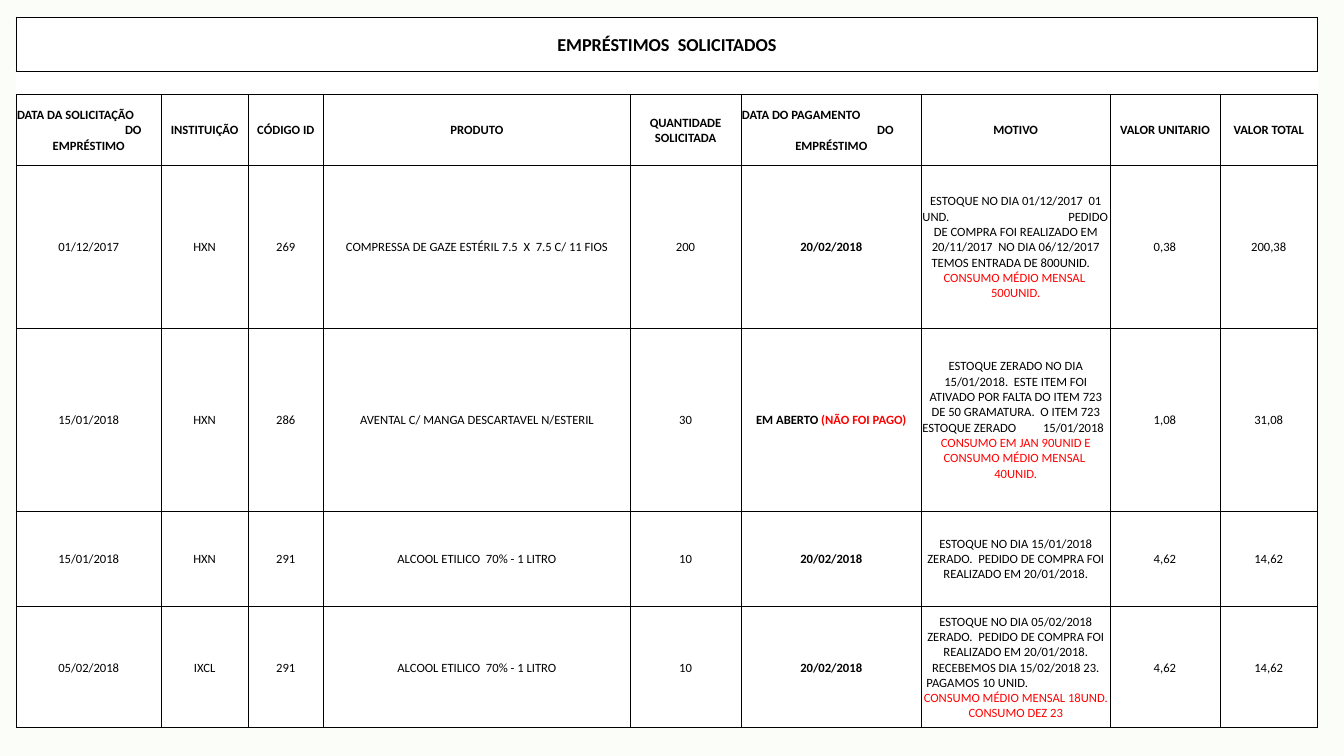
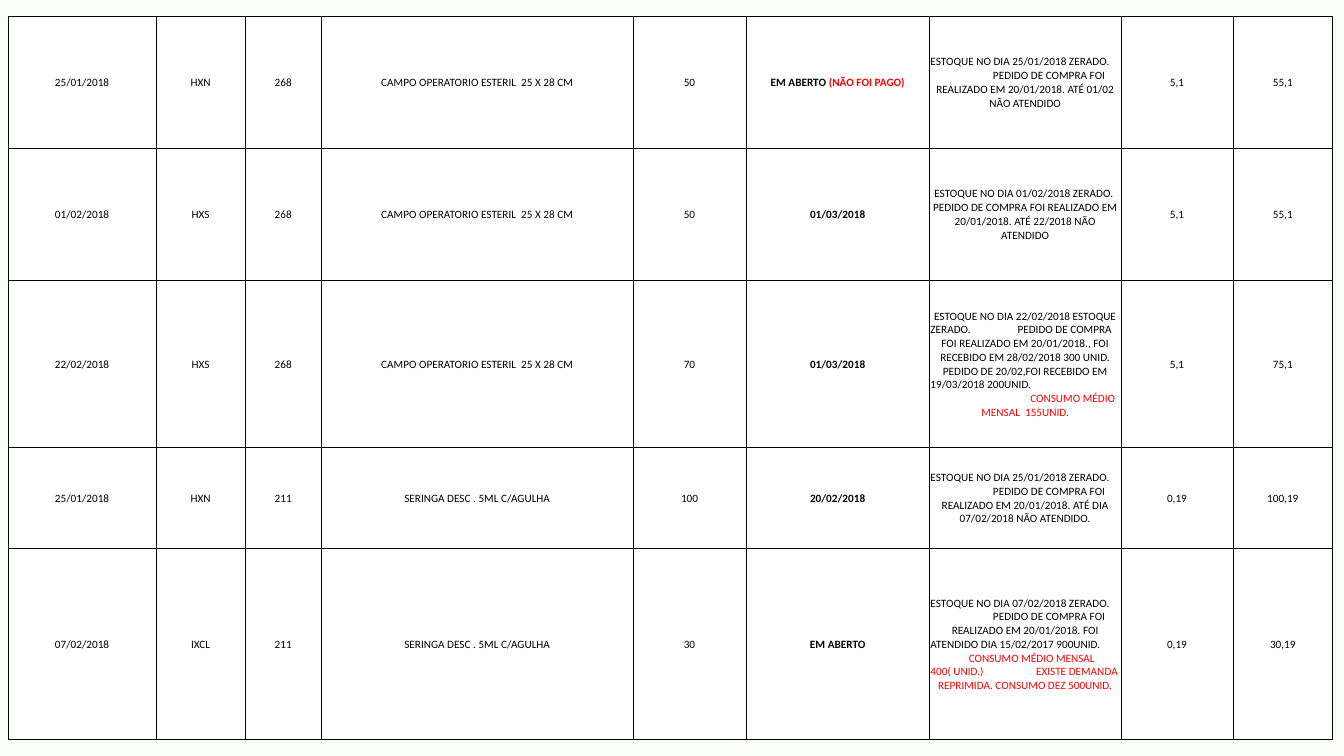
from dataclasses import dataclass
from typing import Optional

from lxml.etree import SubElement
from pptx import Presentation
from pptx.dml.color import RGBColor
from pptx.enum.shapes import MSO_SHAPE
from pptx.enum.text import MSO_ANCHOR, PP_ALIGN
from pptx.oxml.ns import qn
from pptx.util import Inches, Pt


# Shared look
@dataclass(frozen=True)
class Theme:
    font: str = "Calibri"
    ink: str = "000000"
    alert: str = "FF0000"
    paper: str = "FFFFFF"
    tint: str = "F7FCF2"
    tint_alpha: int = 44
    title_size: float = 13
    first_size: float = 9
    second_size: float = 8
    gap_size: float = 4
    rule: float = 0.5
    strong_rule: float = 1
    inset: float = 0.01


THEME = Theme()
WIDTH, HEIGHT = 13.33, 7.5
COLUMNS = (1.44, 0.86, 0.75, 3.04, 1.1, 1.79, 1.87, 1.09, 0.97)
SECOND_SCALE = 1.018


# Content model
@dataclass(frozen=True)
class Run:
    text: str
    color: str = THEME.ink
    bold: bool = False


@dataclass(frozen=True)
class Line:
    """Centred, unless it starts at a left indent; tab is a right stop."""
    runs: tuple[Run, ...]
    left: Optional[float] = None
    tab: Optional[float] = None


Content = tuple[Line, ...]


@dataclass(frozen=True)
class Loan:
    requested: str
    institution: str
    code: str
    product: str
    quantity: str
    payment: Content
    reason: Content
    unit_value: str
    total: str

    def cells(self) -> list[Content]:
        before = (self.requested, self.institution, self.code, self.product, self.quantity)
        return [*((plain(t),) for t in before), self.payment, self.reason,
                (plain(self.unit_value),), (plain(self.total),)]


def plain(text: str, left: Optional[float] = None, tab: Optional[float] = None) -> Line:
    return Line((Run(text),), left, tab)


def alert(text: str, left: Optional[float] = None, tab: Optional[float] = None) -> Line:
    return Line((Run(text, THEME.alert),), left, tab)


def bold(text: str, left: Optional[float] = None) -> Line:
    return Line((Run(text, bold=True),), left)


def out_of_stock(date: str) -> Content:
    return (plain(f"ESTOQUE NO DIA {date} ZERADO.", 0), plain("PEDIDO DE COMPRA FOI", 0.62))


UNPAID: Content = (Line((Run("EM ABERTO ", bold=True),
                         Run("(NÃO FOI PAGO)", THEME.alert, True))),)
PAID_FEB: Content = (bold("20/02/2018"),)
PAID_MAR: Content = (bold("01/03/2018"),)
NORTH, SOUTH, CLINIC = "HXN", "HXS", "IXCL"
ALCOHOL = "ALCOOL ETILICO  70% - 1 LITRO"
DRAPE = "CAMPO OPERATORIO ESTERIL  25 X 28 CM"
SYRINGE = "SERINGA DESC . 5ML C/AGULHA"

HEADINGS: list[Content] = [
    (bold("DATA DA SOLICITAÇÃO", 0), bold("DO", 1.07), bold("EMPRÉSTIMO")),
    (bold("INSTITUIÇÃO"),),
    (bold("CÓDIGO ID"),),
    (bold("PRODUTO"),),
    (bold("QUANTIDADE SOLICITADA"),),
    (bold("DATA DO PAGAMENTO", 0), bold("DO", 1.34), bold("EMPRÉSTIMO")),
    (bold("MOTIVO"),),
    (bold("VALOR UNITARIO"),),
    (bold("VALOR TOTAL"),),
]

FIRST_LOANS = [
    Loan("01/12/2017", NORTH, "269", "COMPRESSA DE GAZE ESTÉRIL 7.5  X  7.5 C/ 11 FIOS", "200",
         PAID_FEB,
         (plain("ESTOQUE NO DIA 01/12/2017  01"),
          plain("UND.\tPEDIDO", 0, 1.84),
          plain("DE COMPRA FOI REALIZADO EM 20/11/2017  NO DIA 06/12/2017"),
          plain("TEMOS ENTRADA DE 800UNID.", 0.09),
          alert("CONSUMO MÉDIO MENSAL  500UNID.")),
         "0,38", "200,38"),
    Loan("15/01/2018", NORTH, "286", "AVENTAL C/ MANGA DESCARTAVEL N/ESTERIL", "30",
         UNPAID,
         (plain("ESTOQUE ZERADO NO DIA 15/01/2018.  ESTE ITEM FOI ATIVADO POR FALTA "
                "DO ITEM 723 DE 50 GRAMATURA.  O ITEM 723"),
          plain("ESTOQUE ZERADO\t15/01/2018", 0, 1.8),
          alert("CONSUMO EM JAN 90UNID E CONSUMO MÉDIO MENSAL  40UNID.")),
         "1,08", "31,08"),
    Loan("15/01/2018", NORTH, "291", ALCOHOL, "10", PAID_FEB,
         (plain("ESTOQUE NO DIA 15/01/2018 ZERADO.  PEDIDO DE COMPRA FOI "
                "REALIZADO EM 20/01/2018."),),
         "4,62", "14,62"),
    Loan("05/02/2018", CLINIC, "291", ALCOHOL, "10", PAID_FEB,
         (plain("ESTOQUE NO DIA 05/02/2018 ZERADO.  PEDIDO DE COMPRA FOI "
                "REALIZADO EM 20/01/2018. RECEBEMOS DIA 15/02/2018 23."),
          plain("PAGAMOS 10 UNID.", 0.04),
          alert("CONSUMO MÉDIO MENSAL 18UND."),
          alert("CONSUMO DEZ 23")),
         "4,62", "14,62"),
]

SECOND_LOANS = [
    Loan("25/01/2018", NORTH, "268", DRAPE, "50", UNPAID,
         (*out_of_stock("25/01/2018"),
          plain("REALIZADO EM 20/01/2018. ATÉ 01/02 NÃO ATENDIDO")),
         "5,1", "55,1"),
    Loan("01/02/2018", SOUTH, "268", DRAPE, "50", PAID_MAR,
         (plain("ESTOQUE NO DIA 01/02/2018 ZERADO.  PEDIDO DE COMPRA FOI REALIZADO EM "
                "20/01/2018. ATÉ 22/2018 NÃO ATENDIDO"),),
         "5,1", "55,1"),
    Loan("22/02/2018", SOUTH, "268", DRAPE, "70", PAID_MAR,
         (plain("ESTOQUE NO DIA 22/02/2018 ESTOQUE"),
          plain("ZERADO.\tPEDIDO DE COMPRA", 0, 1.8),
          plain("FOI REALIZADO EM 20/01/2018., FOI RECEBIDO EM 28/02/2018 300 UNID."),
          plain("PEDIDO DE 20/02,FOI RECEBIDO EM"),
          plain("19/03/2018 200UNID.", 0),
          alert("CONSUMO MÉDIO", 0.99),
          alert("MENSAL  155UNID.")),
         "5,1", "75,1"),
    Loan("25/01/2018", NORTH, "211", SYRINGE, "100", PAID_FEB,
         (*out_of_stock("25/01/2018"),
          plain("REALIZADO EM 20/01/2018. ATÉ DIA 07/02/2018 NÃO ATENDIDO.")),
         "0,19", "100,19"),
    Loan("07/02/2018", CLINIC, "211", SYRINGE, "30", (bold("EM ABERTO"),),
         (*out_of_stock("07/02/2018"),
          plain("REALIZADO EM 20/01/2018. FOI"),
          plain("ATENDIDO DIA 15/02/2017 900UNID.", 0),
          alert("CONSUMO MÉDIO MENSAL", 0.38),
          alert("400( UNID.)\tEXISTE DEMANDA", 0, 1.86),
          alert("REPRIMIDA. CONSUMO DEZ 500UNID.")),
         "0,19", "30,19"),
]


# Drawing
def add_alpha(solid_fill, percent: int) -> None:
    SubElement(solid_fill[0], qn("a:alpha")).set("val", str(percent * 1000))


def new_slide(deck):
    slide = deck.slides.add_slide(deck.slide_layouts[6])
    wash = slide.shapes.add_shape(MSO_SHAPE.RECTANGLE, 0, 0, Inches(WIDTH), Inches(HEIGHT))
    wash.shadow.inherit = False
    wash.fill.solid()
    wash.fill.fore_color.rgb = RGBColor.from_string(THEME.tint)
    add_alpha(wash._element.spPr.find(qn("a:solidFill")), THEME.tint_alpha)
    wash.line.fill.background()
    return slide


def set_borders(cell, sides: dict[str, float]) -> None:
    """Rule each side of a cell; a width of 0 leaves the side open."""
    properties = cell._tc.get_or_add_tcPr()
    for side in "LRTB":
        edge = SubElement(properties, qn(f"a:ln{side}"), w=str(int(Pt(sides[side]))))
        if sides[side]:
            ink = SubElement(edge, qn("a:solidFill"))
            SubElement(ink, qn("a:srgbClr"), val=THEME.ink)
        else:
            SubElement(edge, qn("a:noFill"))


def style_cell(cell, sides: dict[str, float]) -> None:
    set_borders(cell, sides)
    cell.fill.solid()
    cell.fill.fore_color.rgb = RGBColor.from_string(THEME.paper)
    cell.margin_left = cell.margin_right = cell.margin_top = Inches(THEME.inset)
    cell.margin_bottom = 0
    cell.vertical_anchor = MSO_ANCHOR.MIDDLE


def place_line(paragraph, line: Line) -> None:
    paragraph.alignment = PP_ALIGN.CENTER if line.left is None else PP_ALIGN.LEFT
    properties = paragraph._p.get_or_add_pPr()
    if line.left:
        properties.set("marL", str(int(Inches(line.left))))
        properties.set("indent", "0")
    if line.tab:
        stops = SubElement(properties, qn("a:tabLst"))
        SubElement(stops, qn("a:tab"), pos=str(int(Inches(line.tab))), algn="r")


def write(cell, content: Content, size: float) -> None:
    frame = cell.text_frame
    for index, line in enumerate(content):
        paragraph = frame.add_paragraph() if index else frame.paragraphs[0]
        place_line(paragraph, line)
        for part in line.runs:
            run = paragraph.add_run()
            run.text = part.text
            run.font.name = THEME.font
            run.font.size = Pt(size)
            run.font.bold = part.bold
            run.font.color.rgb = RGBColor.from_string(part.color)


def add_grid(slide, left: float, top: float, scale: float, heights: tuple[float, ...]):
    widths = [round(width * scale, 2) for width in COLUMNS]
    grid = slide.shapes.add_table(len(heights), len(widths), Inches(left), Inches(top),
                                  Inches(sum(widths)), Inches(sum(heights))).table
    grid.first_row = grid.horz_banding = False
    for column, width in zip(grid.columns, widths):
        column.width = Inches(width)
    for row, height in zip(grid.rows, heights):
        row.height = Inches(height)
    return grid


def fill_rows(grid, first_row: int, rows: list[list[Content]], size: float) -> None:
    for row_index, row in enumerate(rows, first_row):
        for column_index, content in enumerate(row):
            cell = grid.cell(row_index, column_index)
            style_cell(cell, dict.fromkeys("LRTB", THEME.rule))
            write(cell, content, size)


def add_title_rows(grid, title: str) -> None:
    """Merged title row and the open row below it."""
    for column in range(len(COLUMNS)):
        style_cell(grid.cell(0, column), dict.fromkeys("LRTB", THEME.strong_rule))
        gap = grid.cell(1, column)
        style_cell(gap, {"L": 0, "R": 0, "T": THEME.strong_rule, "B": THEME.rule})
        SubElement(gap.text_frame.paragraphs[0]._p, qn("a:endParaRPr"),
                   sz=str(int(THEME.gap_size * 100)))
    grid.cell(0, 0).merge(grid.cell(0, len(COLUMNS) - 1))
    write(grid.cell(0, 0), (bold(title),), THEME.title_size)


def main() -> None:
    deck = Presentation()
    deck.slide_width, deck.slide_height = Inches(WIDTH), Inches(HEIGHT)

    # Slide 1: title, headings and first loans
    grid = add_grid(new_slide(deck), 0.16, 0.17, 1, (0.54, 0.23, 0.7, 1.62, 1.81, 0.95, 1.2))
    add_title_rows(grid, "EMPRÉSTIMOS  SOLICITADOS")
    fill_rows(grid, 2, [HEADINGS, *(loan.cells() for loan in FIRST_LOANS)], THEME.first_size)

    # Slide 2: remaining loans
    grid = add_grid(new_slide(deck), 0.08, 0.16, SECOND_SCALE, (1.31, 1.31, 1.66, 1, 1.9))
    fill_rows(grid, 0, [loan.cells() for loan in SECOND_LOANS], THEME.second_size)

    deck.save("out.pptx")


if __name__ == "__main__":
    main()
